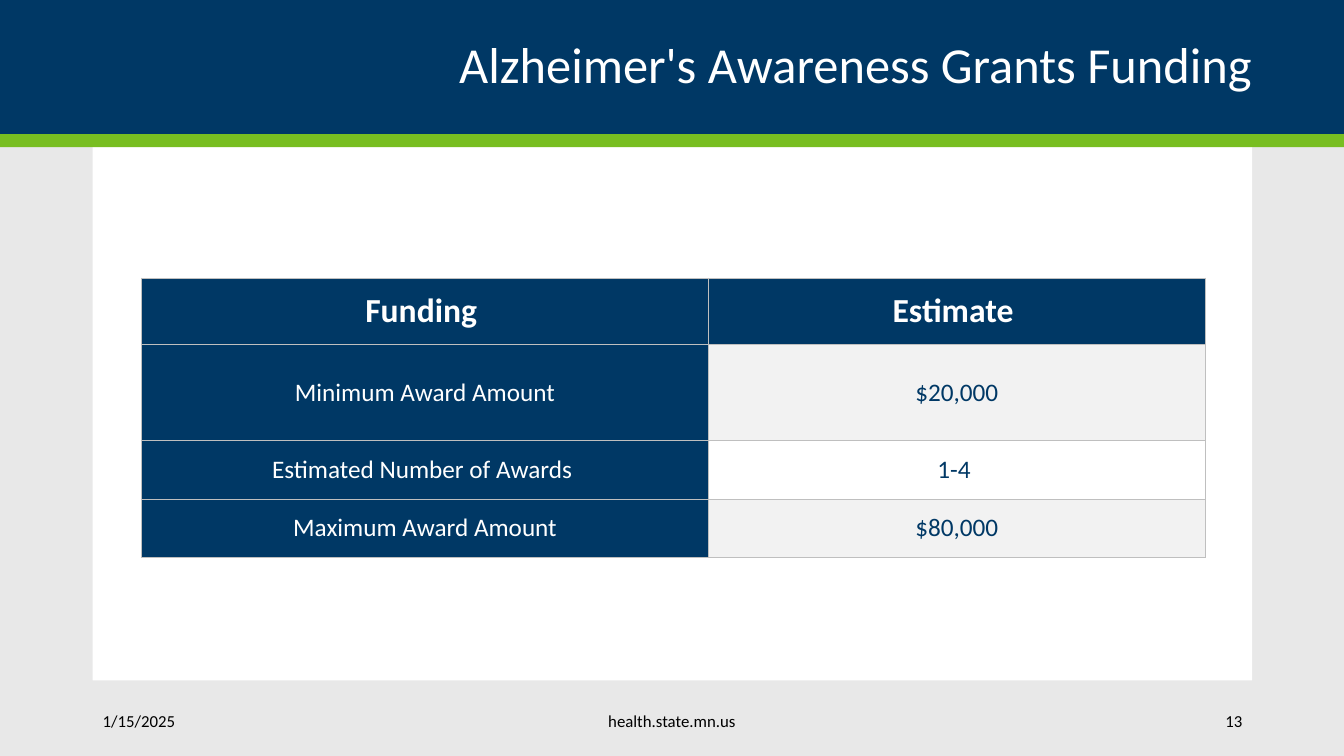
from lxml.etree import SubElement as Sub
from pptx import Presentation
from pptx.dml.color import RGBColor as Rgb
from pptx.enum.shapes import MSO_SHAPE as Shape
from pptx.enum.text import MSO_ANCHOR as Anchor, MSO_AUTO_SIZE as Auto, PP_ALIGN as Align
from pptx.oxml.ns import qn
from pptx.util import Inches, Pt

HUES = {"navy": "003865", "green": "78BE21", "white": "FFFFFF", "black": "000000",
        "back": "E8E8E8", "band": "F2F2F2", "rule": "BFBFBF"}
ROWS = [("Funding ", "Estimate "),
        ("Minimum Award Amount", "$20,000"),
        ("Estimated Number of Awards ", "1-4 "),
        ("Maximum Award Amount", "$80,000")]
FOOT = [("1/15/2025", 0.92, 1.49, Align.LEFT),
        ("health.state.mn.us", 3.61, 6.11, Align.CENTER),
        ("13", 10.82, 1.6, Align.RIGHT)]


def apply(item, values):
    """Set each attribute named in a dict."""
    for key, value in values.items():
        setattr(item, key, value)


def paint(fill, hue):
    """Give a fill one solid colour."""
    fill.solid()
    fill.fore_color.rgb = Rgb.from_string(HUES[hue])


class Deck:
    """Holds the style and the current slide."""

    font = "Calibri"

    def __init__(self):
        """Start a wide deck with one titled slide."""
        self.show = Presentation()
        apply(self.show, {"slide_width": Inches(13.33), "slide_height": Inches(7.5)})
        self.slide = self.show.slides.add_slide(self.show.slide_layouts[5])
        paint(self.slide.background.fill, "back")

    def words(self, frame, text, size, hue, align, bold=False):
        """Put one styled paragraph in a text frame."""
        para = frame.paragraphs[0]
        para.alignment = align
        run = para.add_run()
        run.text = text
        apply(run.font, {"name": self.font, "size": Pt(size), "bold": bold})
        run.font.color.rgb = Rgb.from_string(HUES[hue])
        return para

    def bar(self, hue, *box):
        """Draw a plain filled block."""
        block = self.slide.shapes.add_shape(Shape.RECTANGLE, *map(Inches, box))
        block.shadow.inherit = False
        paint(block.fill, hue)
        block.line.fill.background()

    def title(self, text):
        """Place the title over the header band."""
        head = self.slide.shapes.title
        apply(head, {"left": Inches(0.92), "top": 0,
                     "width": Inches(11.5), "height": Inches(1.33)})
        head.element.getparent().append(head.element)
        apply(head.text_frame, {"margin_left": 0, "margin_right": 0, "word_wrap": True,
                                "vertical_anchor": Anchor.MIDDLE, "auto_size": Auto.NONE})
        self.words(head.text_frame, text, 36, "white", Align.RIGHT).line_spacing = 0.9

    def label(self, text, left, width, align):
        """Add one footer text."""
        box = self.slide.shapes.add_textbox(*map(Inches, (left, 6.95, width, 0.4)))
        apply(box.text_frame, {"word_wrap": True, "vertical_anchor": Anchor.MIDDLE})
        self.words(box.text_frame, text, 12, "black", align)

    def edge(self, cell):
        """Rule all four sides of a cell."""
        props = cell._tc.get_or_add_tcPr()
        for side in "LRTB":
            line = Sub(props, qn("a:ln" + side), w=str(Pt(0.5)))
            Sub(Sub(line, qn("a:solidFill")), qn("a:srgbClr"), val=HUES["rule"])

    def table(self, rows, wide, tall, left, top):
        """Add a table with a navy first row and column."""
        box = map(Inches, (left, top, sum(wide), sum(tall)))
        grid = self.slide.shapes.add_table(len(rows), len(wide), *box).table
        apply(grid, {"first_row": True, "horz_banding": False})
        for col, width in zip(grid.columns, wide):
            col.width = Inches(width)
        for r, (row, height) in enumerate(zip(rows, tall)):
            grid.rows[r].height = Inches(height)
            for c, text in enumerate(row):
                cell = grid.cell(r, c)
                top_row = r == 0
                dark = top_row or c == 0
                self.edge(cell)
                paint(cell.fill, "navy" if dark else "band" if r % 2 else "white")
                cell.vertical_anchor = Anchor.MIDDLE
                self.words(cell.text_frame, text, 24 if top_row else 18,
                           "white" if dark else "navy", Align.CENTER, top_row)


def main():
    """Build and save the slide."""
    deck = Deck()
    deck.bar("navy", 0, 0, 13.33, 1.33)
    deck.bar("white", 0.92, 1.46, 11.5, 5.29)
    deck.bar("green", 0, 1.33, 13.33, 0.13)
    deck.title("Alzheimer's Awareness Grants Funding")
    deck.table(ROWS, (5.63, 4.92), (0.66, 0.95, 0.58, 0.58), 1.4, 2.76)
    for item in FOOT:
        deck.label(*item)
    deck.show.save("out.pptx")


if __name__ == "__main__":
    main()
